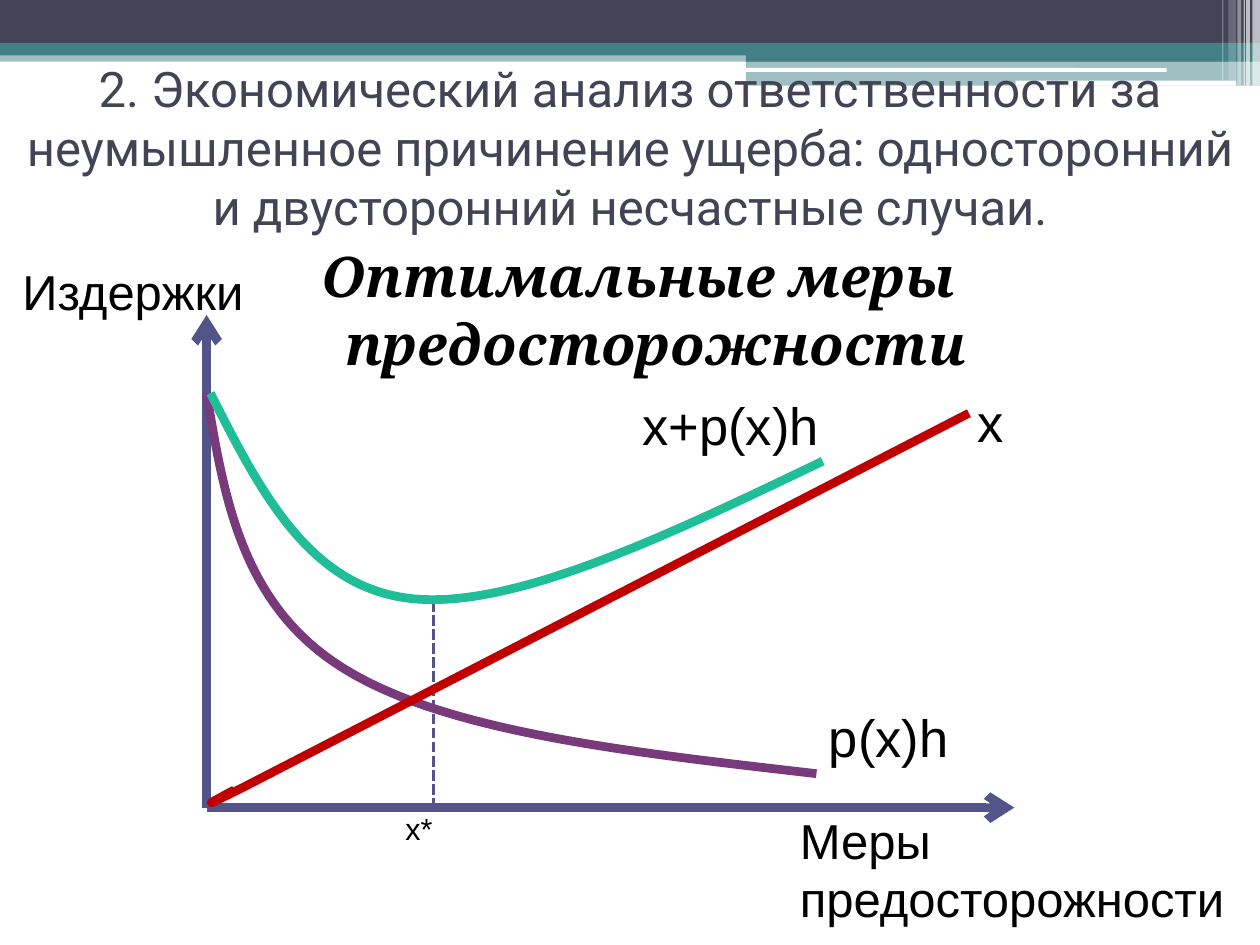
from dataclasses import dataclass

from lxml import etree
from pptx import Presentation
from pptx.dml.color import RGBColor
from pptx.enum.dml import MSO_LINE
from pptx.enum.shapes import MSO_CONNECTOR, MSO_SHAPE
from pptx.enum.text import MSO_ANCHOR, MSO_AUTO_SIZE, PP_ALIGN
from pptx.oxml.ns import qn
from pptx.util import Emu, Pt

RECT = MSO_SHAPE.RECTANGLE
ROUND = MSO_SHAPE.ROUNDED_RECTANGLE
STRAIGHT = MSO_CONNECTOR.STRAIGHT
DASH = MSO_LINE.SQUARE_DOT
LEFT, CENTER = PP_ALIGN.LEFT, PP_ALIGN.CENTER
TOP, MIDDLE = MSO_ANCHOR.TOP, MSO_ANCHOR.MIDDLE
GROW = MSO_AUTO_SIZE.SHAPE_TO_FIT_TEXT
FIXED = MSO_AUTO_SIZE.NONE

SCALE = 9144
COLORS = {
    "ink": "000000",
    "white": "FFFFFF",
    "navy": "424456",
    "teal": "438086",
    "axis": "53548A",
    "risk": "783A7A",
    "care": "C00000",
    "total": "20BE98",
}


@dataclass
class Bar:
    box: tuple[int, int, int, int]
    color: str
    alpha: int = 100
    kind: int = RECT


@dataclass
class Line:
    start: tuple[int, int]
    end: tuple[int, int]
    width: int = 5
    arrow: bool = True


@dataclass
class Curve:
    points: list[tuple[int, int]]
    color: str


@dataclass
class Label:
    text: str
    box: tuple[int, int, int, int]
    size: int = 30
    base: int = 0


BARS = [
    Bar((0, 40, 1000, 9), "teal", 50),
    Bar((0, 0, 1000, 34), "navy"),
    Bar((0, 34, 1000, 10), "teal"),
    Bar((592, 39, 408, 10), "teal"),
    Bar((592, 48, 408, 20), "teal", 50),
    Bar((591, 54, 335, 3), "white", kind=ROUND),
    Bar((806, 64, 175, 4), "white", kind=ROUND),
    Bar((994, 0, 6, 68), "white", 65),
    Bar((989, 0, 3, 68), "white", 65),
    Bar((987, 0, 1, 68), "white", 60),
    Bar((982, 0, 3, 68), "white", 40),
    Bar((975, 0, 6, 64), "white", 20),
    Bar((970, 0, 1, 64), "white", 30),
]
LINES = [
    Line((164, 641), (164, 250)),
    Line((164, 641), (805, 641)),
    Line((344, 477), (344, 641), 2, False),
]
CURVES = [
    Curve([(164, 312), (178, 396), (192, 480), (272, 530),
           (353, 581), (500, 597), (648, 614)], "risk"),
    Curve([(186, 627), (141, 651), (193, 625), (193, 625), (769, 328)], "care"),
    Curve([(167, 312), (206, 389), (245, 466), (326, 475),
           (407, 484), (530, 425), (653, 366)], "total"),
]
LABELS = [
    Label("Издержки", (8, 203, 203, 57), 28),
    Label("Меры предосторожности", (625, 638, 359, 104), 28),
    Label("x*", (312, 633, 56, 61), base=30),
    Label("x", (766, 305, 39, 61)),
    Label("p(x)h", (648, 555, 133, 61)),
    Label("x+p(x)h", (500, 307, 164, 61)),
]


def emu(*nums: int) -> list[Emu]:
    return [Emu(num * SCALE) for num in nums]


def tint(name: str) -> RGBColor:
    return RGBColor.from_string(COLORS[name])


def draw_bar(slide, bar: Bar) -> None:
    shape = slide.shapes.add_shape(bar.kind, *emu(*bar.box))
    shape.shadow.inherit = False
    shape.line.fill.background()
    shape.fill.solid()
    shape.fill.fore_color.rgb = tint(bar.color)
    if bar.alpha < 100:
        color = shape.element.spPr.find(f".//{qn('a:srgbClr')}")
        etree.SubElement(color, qn("a:alpha"), val=str(bar.alpha * 1000))


def draw_line(slide, line: Line) -> None:
    shape = slide.shapes.add_connector(STRAIGHT, *emu(*line.start, *line.end))
    shape.line.color.rgb = tint("axis")
    shape.line.width = Pt(line.width)
    props = shape.element.spPr
    if line.arrow:
        etree.SubElement(props.find(qn("a:ln")), qn("a:tailEnd"), type="arrow")
    else:
        shape.line.dash_style = DASH
    etree.SubElement(props, qn("a:effectLst"))


def draw_curve(slide, curve: Curve) -> None:
    first, *rest = curve.points
    pen = slide.shapes.build_freeform(*first, scale=SCALE)
    pen.add_line_segments(rest, close=False)
    shape = pen.convert_to_shape()
    shape.shadow.inherit = False
    shape.fill.background()
    shape.line.color.rgb = tint(curve.color)
    shape.line.width = Pt(5)
    steps = list(shape.element.iter(qn("a:lnTo")))
    for at in range(0, len(steps) - 2, 3):
        bend = etree.Element(qn("a:cubicBezTo"))
        steps[at].addprevious(bend)
        for step in steps[at:at + 3]:
            bend.append(step[0])
            step.getparent().remove(step)


def add_text(slide, text: str, box: tuple[int, int, int, int], *,
             size: int, font: str = "Arial", color: str = "ink",
             bold: bool = False, align: int = LEFT, anchor: int = TOP,
             fit: int = FIXED, base: int = 0, before: int = 0,
             margin: int = 0, indent: int = 0) -> None:
    frame = slide.shapes.add_textbox(*emu(*box)).text_frame
    frame.word_wrap = True
    frame.auto_size = fit
    frame.vertical_anchor = anchor
    para = frame.paragraphs[0]
    para.alignment = align
    para.space_before = Pt(before)
    if margin:
        props = para._p.get_or_add_pPr()
        props.set("marL", str(margin * SCALE))
        props.set("indent", str(indent * SCALE))
    run = para.add_run()
    run.text = text
    run.font.name = font
    run.font.size = Pt(size)
    run.font.bold = run.font.italic = bold
    run.font.color.rgb = tint(color)
    if base:
        run._r.get_or_add_rPr().set("baseline", str(base * 1000))


def main() -> None:
    deck = Presentation()
    deck.slide_width, deck.slide_height = emu(1000, 750)
    slide = deck.slides.add_slide(deck.slide_layouts[6])
    for bar in BARS:
        draw_bar(slide, bar)
    add_text(slide, "Оптимальные меры предосторожности", (180, 187, 641, 109),
             size=32, font="Cambria", bold=True, align=CENTER,
             before=12, margin=40, indent=-28)
    for line in LINES:
        draw_line(slide, line)
    for curve in CURVES:
        draw_curve(slide, curve)
    for label in LABELS:
        add_text(slide, label.text, label.box, size=label.size,
                 base=label.base, fit=GROW)
    add_text(slide, "2. Экономический анализ ответственности за неумышленное "
             "причинение ущерба: односторонний и двусторонний несчастные случаи.",
             (0, 47, 1000, 139), size=28, font="Roboto", color="navy",
             align=CENTER, anchor=MIDDLE)
    deck.save("out.pptx")


if __name__ == "__main__":
    main()
